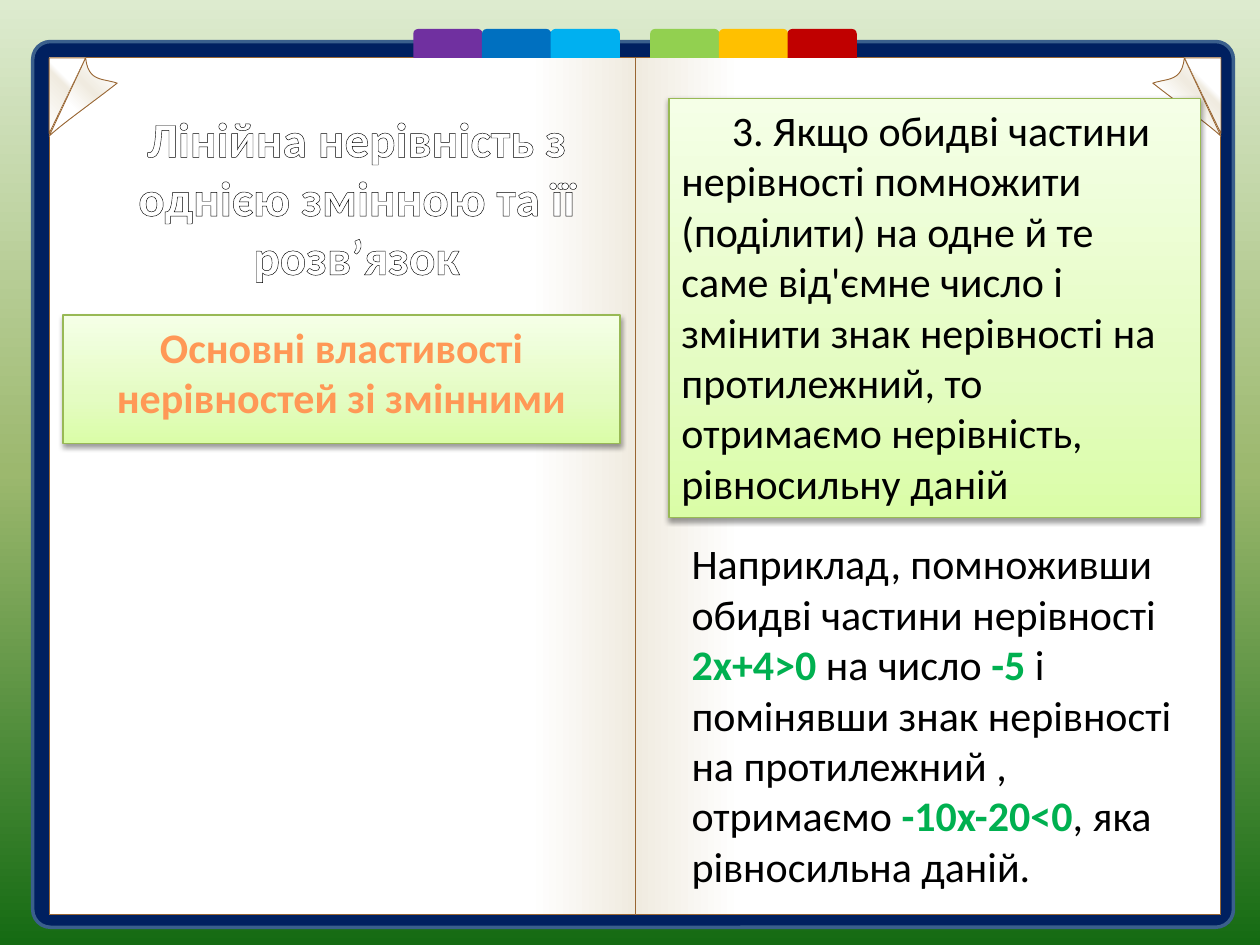
from dataclasses import dataclass

from lxml import etree
from pptx import Presentation
from pptx import util as u
from pptx.dml.color import RGBColor
from pptx.enum import shapes, text
from pptx.oxml.ns import qn


@dataclass(frozen=True)
class Theme:
    font: str = "Calibri"
    title_size: int = 28
    text_size: int = 24
    ink: str = "000000"
    white: str = "FFFFFF"
    accent: str = "00B050"
    cover: str = "002060"
    cover_edge: str = "3A5F8C"
    page_edge: str = "996633"
    card_edge: str = "98B955"
    backdrop: tuple = ((0, "DDEBCF"), (50, "9CB86E"), (100, "156B13"))
    page: tuple = ((0, "FFFFFF"), (82, "FFFFFF"), (100, "F0EBE0"))
    corner: tuple = ((0, "FFFFFF"), (57, "F0EBE0"), (65, "FFFFFF"))
    fold: tuple = ((12, "FFFFFF"), (40, "F0EBE0"), (65, "FFFFFF"))
    card: tuple = ((0, "DAFDA7"), (35, "E4FCC2"), (100, "F5FFE7"))
    heading: tuple = ((0, "9D4700"), (78, "FF9856"), (100, "FFF5F1"))
    left_tabs: tuple = ("7030A0", "0070C0", "00B0F0")
    right_tabs: tuple = ("92D050", "FFC000", "C00000")


def rgb(value):
    return RGBColor.from_string(value)


def add_xml(parent, tag, **attributes):
    return etree.SubElement(parent, qn(tag), {k: str(v) for k, v in attributes.items()})


def paint_gradient(owner, fill, stops, angle):
    fill.gradient()
    fill.gradient_angle = (360 - angle) % 360
    stop_list = next(owner.iter(qn("a:gsLst")))
    for stop in list(stop_list):
        stop_list.remove(stop)
    for position, colour in stops:
        stop = add_xml(stop_list, "a:gs", pos=position * 1000)
        add_xml(stop, "a:srgbClr", val=colour)


def curve(start, first, second, end, steps=12):
    points = []
    for step in range(1, steps + 1):
        t = step / steps
        weights = ((1 - t) ** 3, 3 * t * (1 - t) ** 2, 3 * t * t * (1 - t), t ** 3)
        points.append(tuple(sum(w * p[axis] for w, p in zip(weights, (start, first, second, end)))
                            for axis in (0, 1)))
    return points


class BookSlide:
    def __init__(self, slide, theme):
        self.slide = slide
        self.theme = theme

    def background(self):
        paint_gradient(self.slide.element, self.slide.background.fill, self.theme.backdrop, 90)

    def finish(self, shape, fill, angle=0, edge=None, width=0.5):
        shape.shadow.inherit = False
        if isinstance(fill, str):
            shape.fill.solid()
            shape.fill.fore_color.rgb = rgb(fill)
        else:
            paint_gradient(shape._element, shape.fill, fill, angle)
        if edge:
            shape.line.color.rgb = rgb(edge)
            shape.line.width = u.Pt(width)
        else:
            shape.line.fill.background()
        return shape

    def block(self, box, kind, fill, host=None, **style):
        host = host or self.slide
        return self.finish(host.shapes.add_shape(kind, *map(u.Inches, box)), fill, **style)

    def outline(self, points, fill, angle):
        start, *rest = [(u.Inches(x), u.Inches(y)) for x, y in points]
        builder = self.slide.shapes.build_freeform(*start)
        builder.add_line_segments(rest, close=True)
        return self.finish(builder.convert_to_shape(), fill, angle, self.theme.page_edge)

    def placeholder(self, index, box):
        holder = self.slide.placeholders[index]
        self.slide.shapes._spTree.append(holder._element)
        holder.left, holder.top, holder.width, holder.height = map(u.Inches, box)
        return holder

    def style_card(self, shape):
        self.finish(shape, self.theme.card, 270, self.theme.card_edge, 0.75)
        effects = shape._element.spPr.find(qn("a:effectLst"))
        shadow = add_xml(effects, "a:outerShdw", blurRad=40000, dist=20000,
                         dir=5400000, rotWithShape=0)
        add_xml(add_xml(shadow, "a:srgbClr", val=self.theme.ink), "a:alpha", val=38000)
        return shape

    def set_text(self, shape, runs, size, colour, bold=False, align=text.PP_ALIGN.LEFT,
                 anchor=text.MSO_ANCHOR.TOP, fit=text.MSO_AUTO_SIZE.NONE, indent=0):
        frame = shape.text_frame
        frame.word_wrap = True
        frame.auto_size = fit
        frame.vertical_anchor = anchor
        paragraph = frame.paragraphs[0]
        paragraph.alignment = align
        paragraph.space_before = u.Pt(0)
        properties = paragraph._p.get_or_add_pPr()
        properties.set("marL", "0")
        properties.set("indent", str(u.Inches(indent)))
        add_xml(properties, "a:buNone")
        paragraph.font.name = self.theme.font
        paragraph.font.size = u.Pt(size)
        paragraph.font.bold = bold
        if isinstance(colour, str):
            paragraph.font.color.rgb = rgb(colour)
        else:
            paint_gradient(paragraph._p, paragraph.font.fill, colour, 90)
        for wording, accented in runs:
            run = paragraph.add_run()
            run.text = wording
            if accented:
                run.font.bold = True
                run.font.color.rgb = rgb(self.theme.accent)
        return paragraph

    def title(self, box, wording):
        holder = self.placeholder(0, box)
        paragraph = self.set_text(holder, [(wording, False)], self.theme.title_size,
                                  self.theme.white, True, text.PP_ALIGN.CENTER,
                                  text.MSO_ANCHOR.MIDDLE)
        properties = paragraph.runs[0]._r.get_or_add_rPr()
        edge = add_xml(properties, "a:ln", w=u.Pt(0.75))
        add_xml(add_xml(edge, "a:solidFill"), "a:srgbClr", val=self.theme.ink)

    def heading(self, box, wording):
        holder = self.style_card(self.placeholder(1, box))
        self.set_text(holder, [(wording, False)], self.theme.text_size, self.theme.heading,
                      True, text.PP_ALIGN.CENTER)

    def rule(self, box, wording):
        card = self.block(box, shapes.MSO_SHAPE.RECTANGLE, self.theme.card)
        self.set_text(self.style_card(card), [(wording, False)], self.theme.text_size,
                      self.theme.ink, fit=text.MSO_AUTO_SIZE.SHAPE_TO_FIT_TEXT, indent=0.4)

    def example(self, box, runs):
        note = self.slide.shapes.add_textbox(*map(u.Inches, box))
        self.set_text(note, runs, self.theme.text_size, self.theme.ink,
                      fit=text.MSO_AUTO_SIZE.SHAPE_TO_FIT_TEXT)

    def book(self):
        group = self.slide.shapes.add_group_shape()
        cover = self.block((0.26, 0.33, 9.53, 7.03), shapes.MSO_SHAPE.ROUNDED_RECTANGLE,
                           self.theme.cover, group, edge=self.theme.cover_edge, width=2)
        cover.adjustments[0] = 0.02
        for left, angle in ((0.39, 0), (5.04, 180)):
            self.block((left, 0.46, 4.65, 6.8), shapes.MSO_SHAPE.RECTANGLE, self.theme.page,
                       group, angle=angle, edge=self.theme.page_edge)

    def tabs(self, left, colours):
        for place, colour in enumerate(colours):
            self.block((left + place * 0.545, 0.23, 0.55, 0.23),
                       shapes.MSO_SHAPE.ROUND_2_SAME_RECTANGLE, colour)

    def both_corners(self, points, fill, angle):
        self.outline([(10.08 - x, y) for x, y in points], fill, angle)
        self.outline(points, fill, angle)


def main():
    deck = Presentation()
    deck.slide_width, deck.slide_height = u.Inches(10), u.Inches(7.5)
    theme = Theme()
    page = BookSlide(deck.slides.add_slide(deck.slide_layouts[1]), theme)
    page.background()
    page.book()
    page.both_corners([(0.68, 0.46), (0.39, 1.06), (0.39, 0.46)], theme.corner, 315)
    page.title((0.62, 0.78, 4.42, 1.56), "Лінійна нерівність з однією змінною та її розв’язок")
    page.tabs(3.28, theme.left_tabs)
    page.tabs(5.16, theme.right_tabs)
    tip, foot, top = (0.93, 0.66), (0.39, 1.08), (0.68, 0.46)
    fold = [tip, *curve(tip, (0.74, 0.81), (0.51, 0.97), foot),
            top, *curve(top, (0.7, 0.65), (0.81, 0.62), tip)]
    page.both_corners(fold, theme.fold, 135)
    page.heading((0.5, 2.5, 4.42, 1.02), "Основні властивості нерівностей зі змінними")
    page.rule((5.31, 0.78, 4.22, 3.33),
              "3. Якщо обидві частини нерівності помножити (поділити) на одне й те саме "
              "від'ємне число і змінити знак нерівності на протилежний, то отримаємо "
              "нерівність, рівносильну даній")
    page.example((5.39, 4.22, 4.06, 2.93), [
        ("Наприклад, помноживши обидві частини нерівності ", False),
        ("2х+4>0 ", True),
        ("на число ", False),
        ("-5 ", True),
        ("і помінявши знак нерівності на протилежний , отримаємо ", False),
        ("-10x-20<0", True),
        (", яка рівносильна даній.", False),
    ])
    deck.save("out.pptx")


if __name__ == "__main__":
    main()
